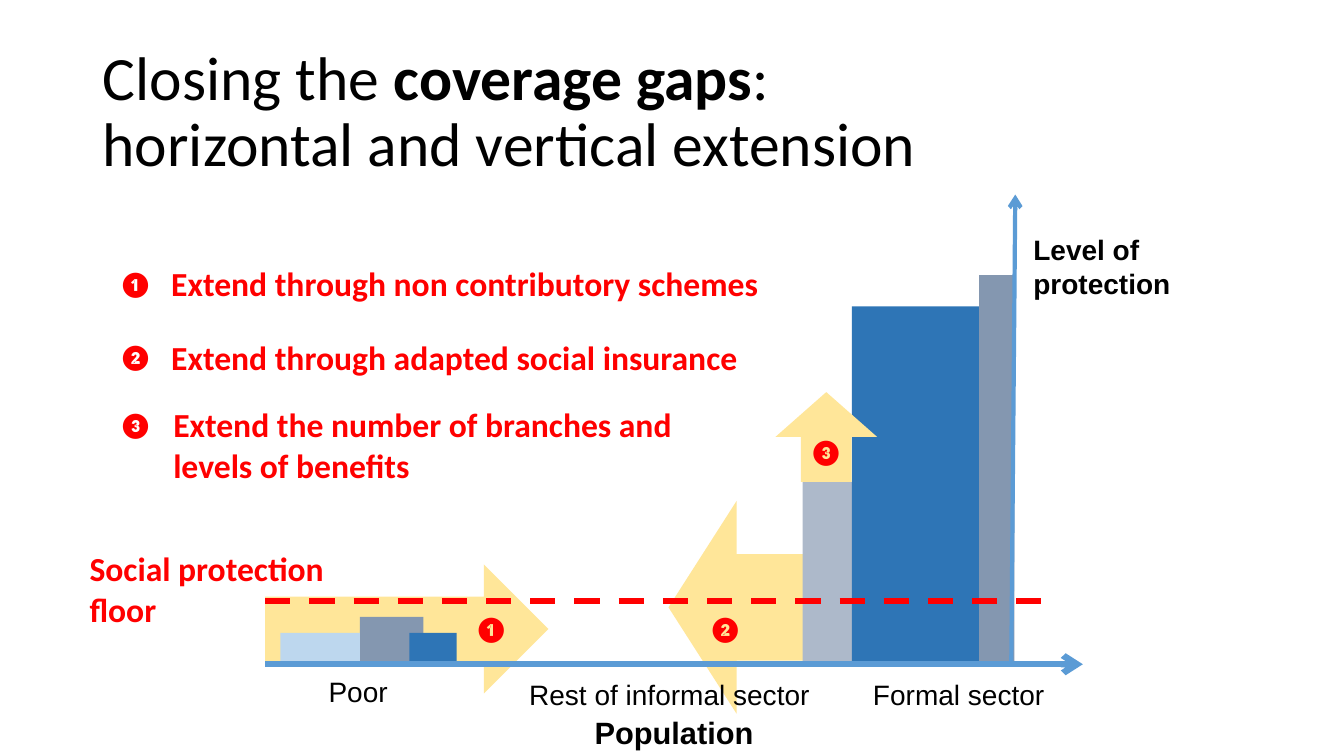
from dataclasses import dataclass

from lxml.etree import SubElement
from pptx import Presentation
from pptx.dml.color import RGBColor
from pptx.enum.dml import MSO_LINE
from pptx.enum.shapes import MSO_CONNECTOR, MSO_SHAPE
from pptx.enum.text import MSO_ANCHOR, MSO_AUTO_SIZE
from pptx.oxml.ns import qn
from pptx.util import Inches, Pt

COLUMNS, ROWS = 133.3, 75
BASELINE = 65.8


@dataclass(frozen=True)
class Theme:
    body: str = "Calibri"
    chart: str = "Arial"
    ink: str = "000000"
    accent: str = "FF0000"
    arrow: str = "FFE699"
    axis: str = "5B9BD5"
    blue: str = "2E75B6"
    light_blue: str = "BDD7EE"
    slate: str = "8497B0"
    light_slate: str = "ADB9CA"
    title_size: int = 44
    message_size: int = 24
    population_size: int = 22
    label_size: int = 20
    badge_size: int = 18


class Diagram:
    def __init__(self, deck, theme):
        self.theme = theme
        self.page = deck.slides.add_slide(deck.slide_layouts[6])
        self.column = deck.slide_width / COLUMNS
        self.row = deck.slide_height / ROWS

    def place(self, left, top, width, height):
        """Turn grid columns and rows into slide lengths."""
        return (round(left * self.column), round(top * self.row),
                round(width * self.column), round(height * self.row))

    def text(self, area, lines, size, color, font, wrap=False, spacing=None):
        """Add one paragraph; each line is a list of (text, bold) spans."""
        box = self.page.shapes.add_textbox(*self.place(*area))
        frame = box.text_frame
        frame.word_wrap = wrap
        frame.auto_size = MSO_AUTO_SIZE.SHAPE_TO_FIT_TEXT
        para = frame.paragraphs[0]
        para.line_spacing = spacing
        for number, spans in enumerate(lines):
            if number:
                para.add_line_break()
            for words, bold in spans:
                span = para.add_run()
                span.text = words
                span.font.name = font
                span.font.size = Pt(size)
                span.font.bold = bold
                span.font.color.rgb = RGBColor.from_string(color)
        return frame

    def title(self, area, lines):
        frame = self.text(area, lines, self.theme.title_size, self.theme.ink,
                          self.theme.body, wrap=True, spacing=0.9)
        frame.auto_size = MSO_AUTO_SIZE.NONE
        frame.vertical_anchor = MSO_ANCHOR.MIDDLE

    def message(self, area, *lines, wrap=False):
        self.text(area, [[(line, True)] for line in lines], self.theme.message_size,
                  self.theme.accent, self.theme.body, wrap)

    def badge(self, left, top, symbol):
        self.text((left, top, 5.4, 4), [[(symbol, True)]], self.theme.badge_size,
                  self.theme.accent, self.theme.body)

    def label(self, area, words, size=None, bold=False, wrap=False):
        self.text(area, [[(words, bold)]], size or self.theme.label_size,
                  self.theme.ink, self.theme.chart, wrap)

    def solid(self, preset, area, color):
        shape = self.page.shapes.add_shape(preset, *self.place(*area))
        shape.shadow.inherit = False
        shape.fill.solid()
        shape.fill.fore_color.rgb = RGBColor.from_string(color)
        shape.line.fill.background()
        return shape

    def bar(self, left, width, height, color):
        """Stand a bar on the population axis."""
        self.solid(MSO_SHAPE.RECTANGLE, (left, BASELINE - height, width, height), color)

    def block_arrow(self, area, rotation=0):
        self.solid(MSO_SHAPE.RIGHT_ARROW, area, self.theme.arrow).rotation = rotation

    def line(self, start, end, color, weight, dashed=False):
        """Add a dashed line, or a solid one with an arrowhead at its end."""
        link = self.page.shapes.add_connector(
            MSO_CONNECTOR.STRAIGHT, *self.place(*start, *end))
        link.line.color.rgb = RGBColor.from_string(color)
        link.line.width = Pt(weight)
        properties = link._element.spPr
        if dashed:
            link.line.dash_style = MSO_LINE.DASH
        else:
            SubElement(properties.find(qn("a:ln")), qn("a:tailEnd"), type="arrow")
        SubElement(properties, qn("a:effectLst"))


def main():
    deck = Presentation()
    deck.slide_width, deck.slide_height = Inches(13.33), Inches(7.5)
    theme = Theme()
    diagram = Diagram(deck, theme)

    diagram.title((9.2, 4, 115, 14.5), [
        [("Closing the ", False), ("coverage gaps", True), (":", False)],
        [("horizontal and vertical extension", False)],
    ])
    diagram.message((7.9, 53.9, 31.3, 9.1), "Social protection", "floor", wrap=True)
    diagram.message((16, 25.6, 60.8, 5), "Extend through non contributory schemes")
    diagram.message((16, 32.9, 59.5, 5), "Extend through adapted social insurance")
    diagram.message((16.2, 39.6, 51.8, 9.1),
                    "Extend the number of branches and levels of benefits", wrap=True)
    for top, symbol in ((26.1, "❶"), (33.4, "❷"), (40.1, "❸")):
        diagram.badge(10.8, top, symbol)

    diagram.block_arrow((66.3, 49.7, 13.5, 21.1), rotation=180)
    diagram.block_arrow((26.3, 56, 28.1, 12.8))
    for bar in (
        (79.6, 5, 18, theme.light_slate),
        (84.5, 12.6, 35.4, theme.blue),
        (97.1, 3.5, 38.5, theme.slate),
        (35.7, 6.3, 4.6, theme.slate),
        (40.6, 4.7, 3, theme.blue),
        (27.8, 7.9, 3, theme.light_blue),
    ):
        diagram.bar(*bar)

    diagram.label((31.6, 66.4, 7.9, 4.4), "Poor")
    diagram.label((51.5, 66.7, 30, 4.4), "Rest of informal sector")
    diagram.label((85.6, 66.7, 19.1, 4.4), "Formal sector")
    diagram.label((58, 70.3, 18, 4.7), "Population", theme.population_size, bold=True)
    diagram.label((101.5, 22.6, 16.9, 7.7), "Level of protection", bold=True, wrap=True)

    diagram.line((100.3, 65.9), (100.7, 19.3), theme.axis, 3)
    diagram.line((26.3, 59.6), (103.4, 59.6), theme.accent, 4.5, dashed=True)
    diagram.line((26.3, 65.9), (107.4, 65.9), theme.axis, 4.5)

    diagram.block_arrow((77.5, 38.3, 8.9, 10.1), rotation=270)
    for left, top, symbol in ((46.1, 60.4, "❶"), (69.3, 60.4, "❷"), (79.3, 42.8, "❸")):
        diagram.badge(left, top, symbol)

    deck.save("out.pptx")


if __name__ == "__main__":
    main()
